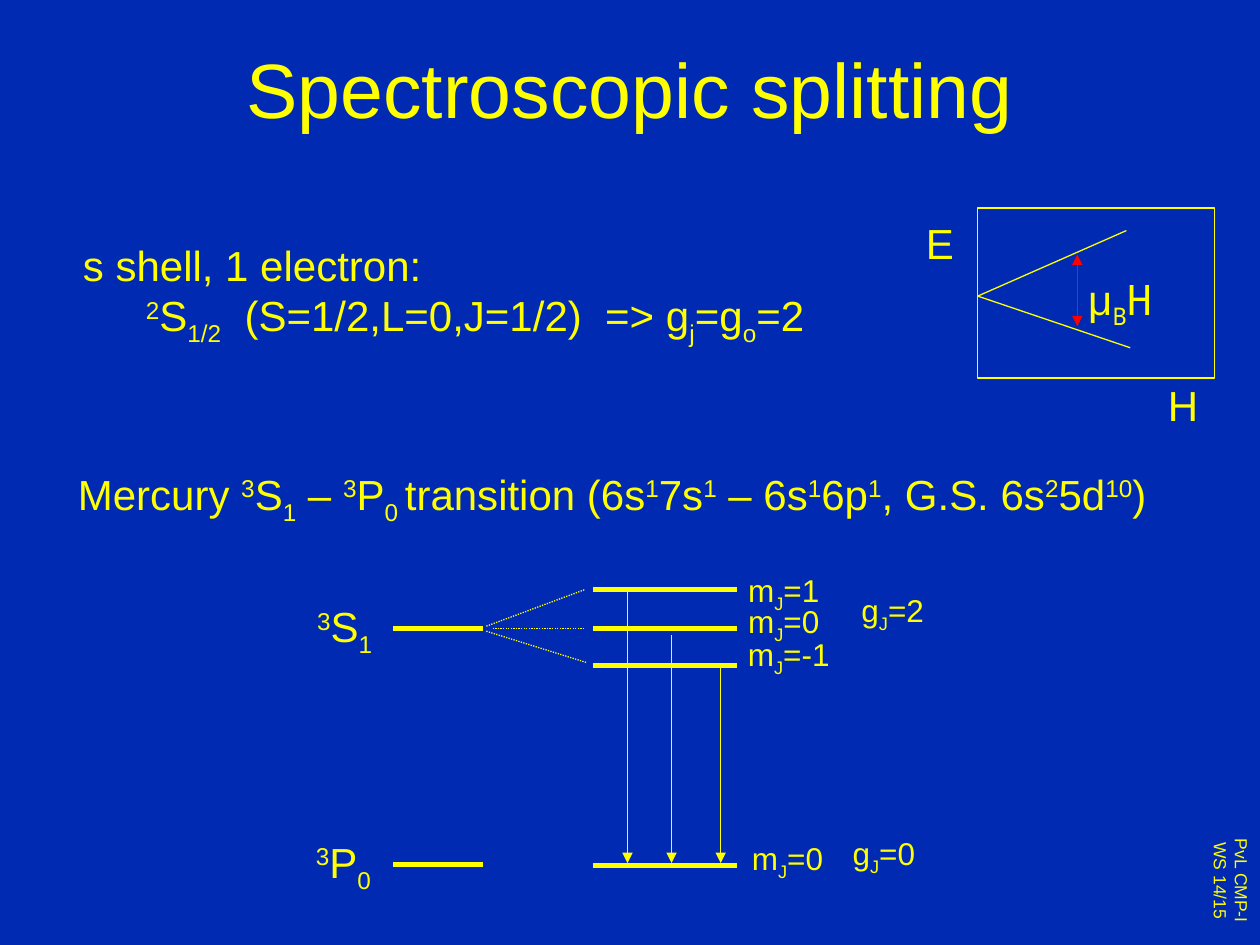
from dataclasses import dataclass

from lxml import etree
from pptx import Presentation
from pptx.dml.color import RGBColor
from pptx.enum.dml import MSO_LINE
from pptx.enum.shapes import MSO_CONNECTOR, MSO_SHAPE
from pptx.enum.text import MSO_ANCHOR, MSO_AUTO_SIZE, PP_ALIGN
from pptx.oxml.ns import qn
from pptx.util import Inches, Pt

STRAIGHT = MSO_CONNECTOR.STRAIGHT
RECTANGLE = MSO_SHAPE.RECTANGLE
DOTTED = MSO_LINE.ROUND_DOT
LEFT, CENTER = PP_ALIGN.LEFT, PP_ALIGN.CENTER

COLORS = {"background": "002AB2", "ink": "FFFF00", "splitting": "FF0000"}
FONT, MONO = "Arial", "Noto Sans Mono"
BASELINES = {"^": "30000", "_": "-25000"}


@dataclass
class Label:
    """Text with |-separated runs; ^ starts a superscript, _ a subscript."""
    text: str
    left: float
    top: float
    width: float
    height: float = 0.5
    size: float = 24
    align: PP_ALIGN = CENTER


@dataclass
class Line:
    x1: float
    y1: float
    x2: float
    y2: float
    weight: float = 0.75
    color: str = "ink"
    dotted: bool = False
    ends: tuple = ()


def rgb(name: str) -> RGBColor:
    return RGBColor.from_string(COLORS[name])


def write(tf, text: str, size: float, align: PP_ALIGN) -> None:
    for i, row in enumerate(text.split("\n")):
        p = tf.paragraphs[0] if i == 0 else tf.add_paragraph()
        p.alignment = align
        for part in filter(None, row.split("|")):
            r = p.add_run()
            r.text = part.lstrip("^_")
            for key, value in {"name": FONT, "size": Pt(size)}.items():
                setattr(r.font, key, value)
            r.font.color.rgb = rgb("ink")
            if part[0] in BASELINES:
                r.font._element.set("baseline", BASELINES[part[0]])


def add_label(s, label: Label):
    box = (label.left, label.top, label.width, label.height)
    tf = s.shapes.add_textbox(*map(Inches, box)).text_frame
    tf.word_wrap = False
    tf.auto_size = MSO_AUTO_SIZE.SHAPE_TO_FIT_TEXT
    write(tf, label.text, label.size, label.align)
    return tf


def add_line(s, line: Line) -> None:
    points = (line.x1, line.y1, line.x2, line.y2)
    sp = s.shapes.add_connector(STRAIGHT, *map(Inches, points))
    sp.line.color.rgb = rgb(line.color)
    sp.line.width = Pt(line.weight)
    if line.dotted:
        sp.line.dash_style = DOTTED
    ln = sp.line._get_or_add_ln()
    for end in line.ends:
        etree.SubElement(ln, qn(f"a:{end}"), type="triangle")
    etree.SubElement(sp._element.spPr, qn("a:effectLst"))


def main() -> None:
    prs = Presentation()
    prs.slide_width, prs.slide_height = Inches(10), Inches(7.5)
    s = prs.slides.add_slide(prs.slide_layouts[5])
    s.background.fill.solid()
    s.background.fill.fore_color.rgb = rgb("background")

    # Title
    title = s.shapes.title
    place = {"left": 0.75, "top": 0.07, "width": 8.5, "height": 1.25}
    for key, value in place.items():
        setattr(title, key, Inches(value))
    title.text_frame.vertical_anchor = MSO_ANCHOR.MIDDLE
    write(title.text_frame, "Spectroscopic splitting", 44, CENTER)

    # Course mark, turned along the right edge
    mark = Label("PvL CMP-I\nWS 14/15", 9.45, 6.6, 0.54, 0.78, 10)
    add_label(s, mark)._txBody.bodyPr.set("vert", "vert")

    # Statements
    add_label(s, Label(
        "s shell, 1 electron:\n"
        "\t|^2|S|_1/2|  (S=1/2,L=0,J=1/2)  => g|_j|=g|_o|=2",
        0.56, 1.85, 6.5, 0.9, align=LEFT))
    add_label(s, Label(
        "Mercury |^3|S|_1| – |^3|P|_0 |transition (6s|^1|7s|^1| – 6s|^1|6p|^1"
        "|, G.S. 6s|^2|5d|^10|)", 0.52, 3.67, 8.86, align=LEFT))

    # Energy against field plot
    frame = s.shapes.add_shape(
        RECTANGLE, *map(Inches, (7.76, 1.65, 1.88, 1.35)))
    frame.shadow.inherit = False
    frame.fill.background()
    frame.line.color.rgb = rgb("ink")
    frame.line.width = Pt(0.75)
    for x, y in ((8.94, 1.83), (8.97, 2.76)):
        add_line(s, Line(7.76, 2.35, x, y))
    add_line(s, Line(8.55, 2.02, 8.55, 2.59, color="splitting",
                     ends=("headEnd", "tailEnd")))
    add_label(s, Label("H", 9.17, 2.96, 0.44))
    add_label(s, Label("E", 7.25, 1.68, 0.42))
    moment = add_label(s, Label("μ|_B|H", 8.5, 2.12, 0.78))
    for r in moment.paragraphs[0].runs[1:]:
        r.font.name = MONO

    # Unsplit terms
    for text, left, top, y in (("^3|S|_1", 2.4, 4.72, 4.99),
                               ("^3|P|_0", 2.39, 6.59, 6.86)):
        add_label(s, Label(text, left, top, 0.67))
        add_line(s, Line(3.12, y, 3.83, y, weight=3))

    # Split levels, with their fan and the transitions down
    for y in (4.68, 4.99, 5.28, 6.87):
        add_line(s, Line(4.71, y, 5.85, y, weight=3))
    for points in ((3.86, 4.97, 4.64, 4.68), (3.91, 4.99, 4.64, 4.99),
                   (3.86, 5.01, 4.66, 5.26)):
        add_line(s, Line(*points, dotted=True))
    for x, y in ((4.98, 4.69), (5.33, 5.04), (5.72, 5.27)):
        add_line(s, Line(x, y, x, 6.85, ends=("tailEnd",)))

    # Quantum numbers and g factors
    for text, left, top, width in (("m|_J|=1", 5.83, 4.48, 0.78),
                                   ("m|_J|=0", 5.83, 4.73, 0.78),
                                   ("m|_J|=-1", 5.83, 4.99, 0.86),
                                   ("m|_J|=0", 5.86, 6.61, 0.78),
                                   ("g|_J|=2", 6.73, 4.64, 0.71),
                                   ("g|_J|=0", 6.66, 6.57, 0.71)):
        add_label(s, Label(text, left, top, width, 0.4, 18))

    prs.save("out.pptx")


if __name__ == "__main__":
    main()
